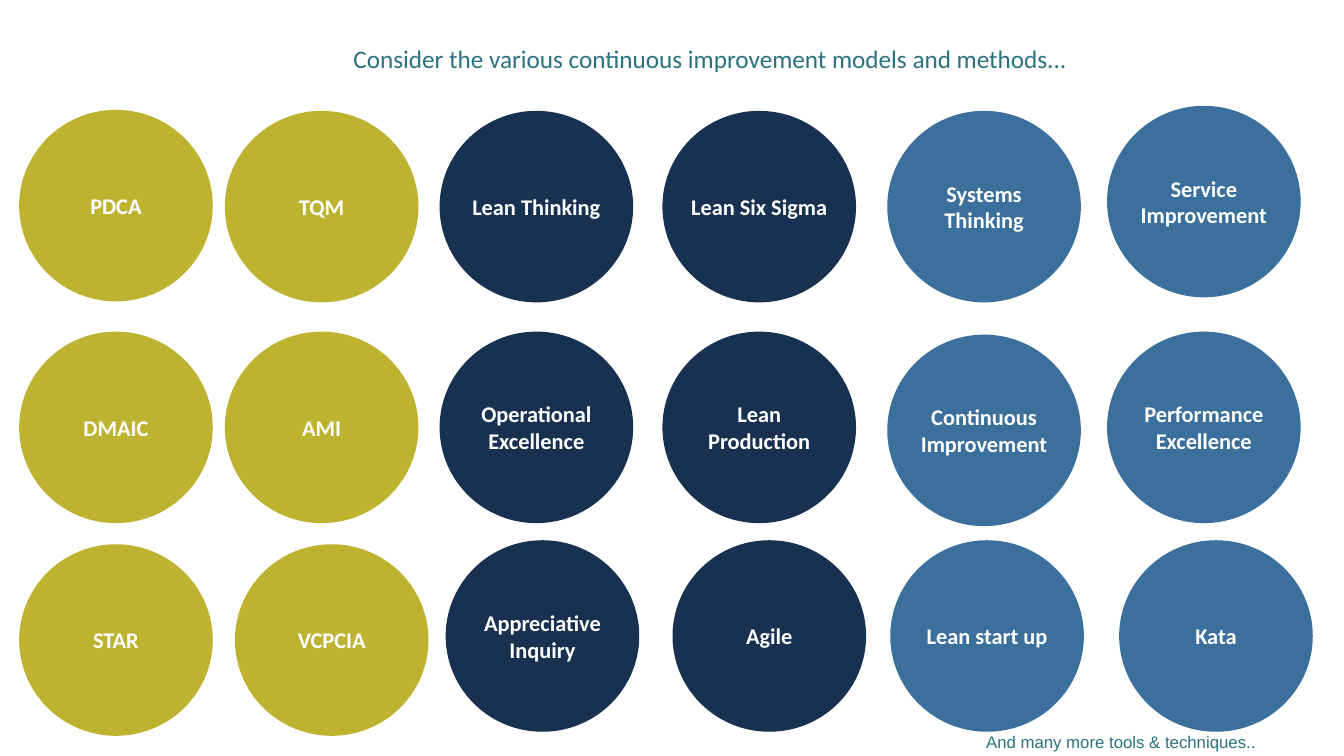
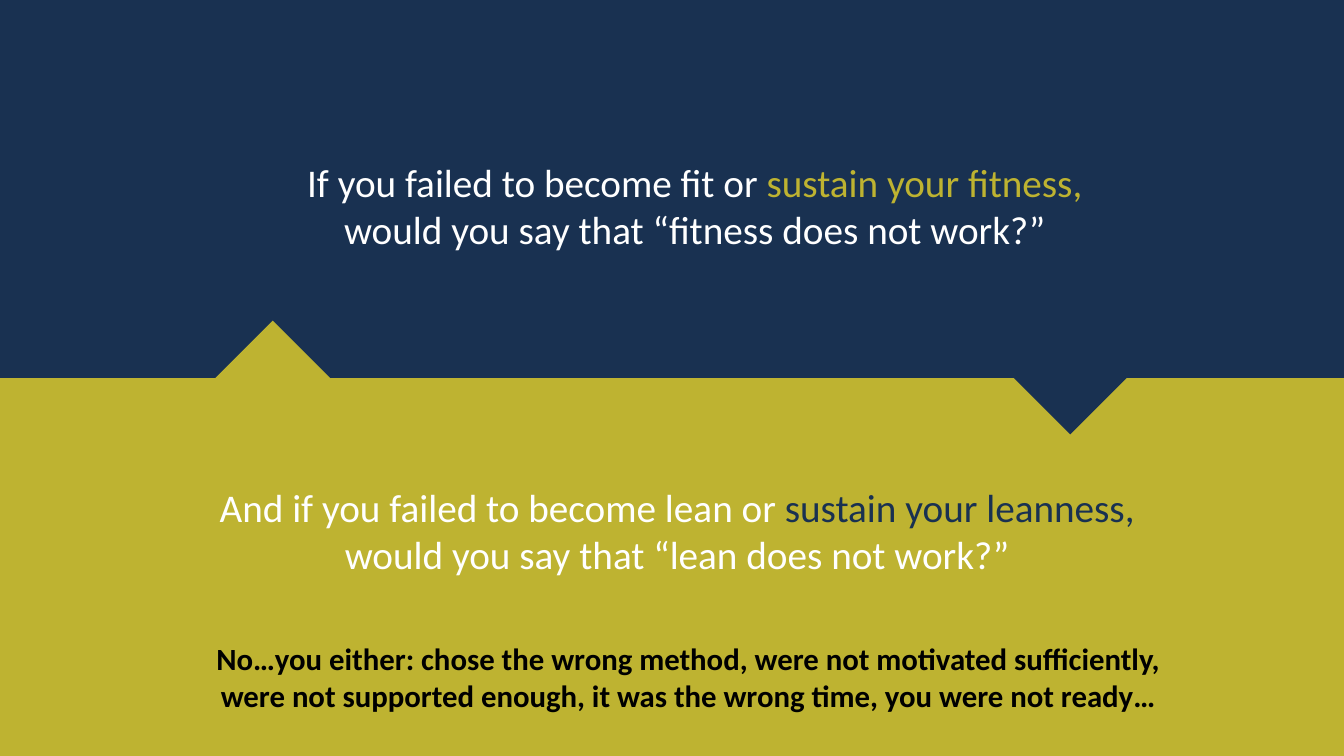
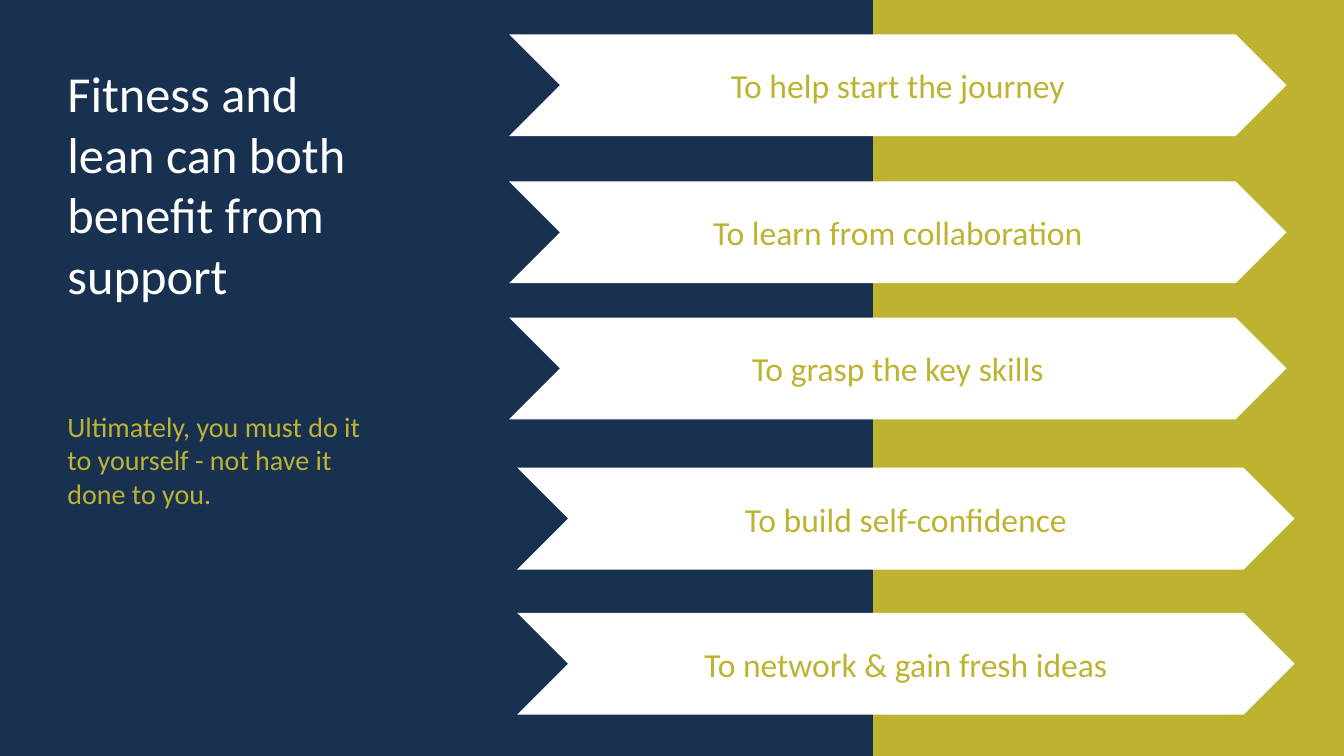
"""Build three slides comparing improvement methods with getting fit."""
from dataclasses import dataclass

from pptx import Presentation
from pptx.dml.color import RGBColor
from pptx.enum import shapes, text
from pptx.util import Inches, Pt

NAVY, OLIVE, BLUE, TEAL = "193151", "BEB331", "3B709C", "2B7280"
WHITE, BLACK = "FFFFFF", "000000"
WIDTH, HEIGHT = 13.33, 7.5
CENTER, LEFT = text.PP_ALIGN.CENTER, text.PP_ALIGN.LEFT
TOP, MIDDLE = text.MSO_ANCHOR.TOP, text.MSO_ANCHOR.MIDDLE
SHAPE = shapes.MSO_SHAPE


@dataclass(frozen=True)
class Box:
    left: float
    top: float
    width: float
    height: float

    def lengths(self):
        return [Inches(v) for v in (self.left, self.top, self.width, self.height)]


@dataclass(frozen=True)
class MethodColumn:
    colour: str
    methods: tuple[str, str, str]
    lefts: tuple[float, float, float]
    tops: tuple[float, float, float]


@dataclass(frozen=True)
class Benefit:
    label: str
    left: float
    top: float


METHOD_COLUMNS = (
    MethodColumn(OLIVE, ("PDCA", "DMAIC", "STAR"), (0.19, 0.19, 0.19), (1.09, 3.29, 5.4)),
    MethodColumn(OLIVE, ("TQM", "AMI", "VCPCIA"), (2.23, 2.23, 2.33), (1.1, 3.29, 5.4)),
    MethodColumn(NAVY, ("Lean Thinking", "Operational Excellence", "Appreciative Inquiry"),
                 (4.36, 4.36, 4.42), (1.1, 3.29, 5.36)),
    MethodColumn(NAVY, ("Lean Six Sigma", "Lean Production", "Agile"),
                 (6.57, 6.57, 6.67), (1.1, 3.29, 5.36)),
    MethodColumn(BLUE, ("Systems Thinking", "Continuous Improvement", "Lean start up"),
                 (8.8, 8.8, 8.83), (1.1, 3.32, 5.36)),
    MethodColumn(BLUE, ("Service Improvement", "Performance Excellence", "Kata"),
                 (10.98, 10.98, 11.1), (1.05, 3.29, 5.36)),
)

BENEFITS = (
    Benefit("To help start the journey", 5.05, 0.34),
    Benefit("To learn from collaboration", 5.05, 1.8),
    Benefit("To grasp the key skills", 5.05, 3.15),
    Benefit("To build self-confidence", 5.13, 4.64),
    Benefit("To network & gain fresh ideas", 5.13, 6.08),
)


def rgb(colour: str) -> RGBColor:
    """Turn a hex string into a colour."""
    return RGBColor.from_string(colour)


def write(holder, *phrases, size, colour=WHITE, font="Calibri", bold=False,
          align=CENTER, anchor=TOP, inset=0.1):
    """Write phrases, each a string or a (string, colour) pair, as one paragraph."""
    frame = holder.text_frame
    frame.word_wrap = True
    frame.vertical_anchor = anchor
    frame.margin_left = frame.margin_right = Inches(inset)
    frame.margin_top = frame.margin_bottom = Inches(0.05)
    paragraph = frame.paragraphs[0]
    paragraph.alignment = align
    for phrase in phrases:
        words, shade = (phrase, colour) if isinstance(phrase, str) else phrase
        for number, line in enumerate(words.split("\n")):
            if number:
                paragraph.add_line_break()
            if line:
                run = paragraph.add_run()
                run.text = line
                run.font.size = Pt(size)
                run.font.name = font
                run.font.bold = bold
                run.font.color.rgb = rgb(shade)


def add_text(slide, box: Box, *phrases, **style):
    """Add a text box holding the phrases."""
    write(slide.shapes.add_textbox(*box.lengths()), *phrases, **style)


def add_figure(slide, kind, box: Box, fill: str, rotation: float = 0):
    """Add a flat filled shape without an outline."""
    figure = slide.shapes.add_shape(kind, *box.lengths())
    figure.shadow.inherit = False
    figure.fill.solid()
    figure.fill.fore_color.rgb = rgb(fill)
    figure.line.fill.background()
    figure.rotation = rotation
    return figure


def build_methods(slide):
    """Draw the wall of improvement methods."""
    add_text(slide, Box(2.43, 0.19, 9.23, 0.77),
             "Consider the various continuous improvement models and methods...",
             size=18, colour=TEAL, anchor=MIDDLE, inset=0)
    add_text(slide, Box(9.78, 7.16, 2.82, 0.39), "And many more tools & techniques..",
             size=12, colour=TEAL, font="Arial", align=LEFT, anchor=MIDDLE, inset=0)
    for column in METHOD_COLUMNS:
        for method, left, top in zip(column.methods, column.lefts, column.tops):
            circle = add_figure(slide, SHAPE.OVAL, Box(left, top, 1.92, 1.9), column.colour)
            write(circle, method, size=16, bold=True, anchor=MIDDLE, inset=0)


def build_question(slide):
    """Draw the fitness question above the lean question."""
    half = HEIGHT / 2
    add_figure(slide, SHAPE.RECTANGLE, Box(0, 0, WIDTH, half), NAVY)
    add_figure(slide, SHAPE.RECTANGLE, Box(0, half, WIDTH, half), OLIVE)
    add_figure(slide, SHAPE.RIGHT_TRIANGLE, Box(1.91, 3.51, 1.59, 1.59), OLIVE, 135)
    add_figure(slide, SHAPE.RIGHT_TRIANGLE, Box(9.82, 2.39, 1.59, 1.59), NAVY, 315)
    add_text(slide, Box(2.35, 1.52, 9.08, 1.04), "If you failed to become fit or ",
             ("sustain your fitness,\n", OLIVE),
             "would you say that “fitness does not work?”", size=28)
    add_text(slide, Box(2.07, 4.75, 9.29, 1.04), "And if you failed to become lean or ",
             ("sustain your leanness, ", NAVY),
             "would you say that “lean does not work?”", size=28)
    add_text(slide, Box(1.92, 6.3, 9.81, 1.04),
             "No…you either: chose the wrong method, were not motivated sufficiently, "
             "were not supported enough, it was the wrong time, you were not ready…",
             size=22, colour=BLACK, bold=True)


def build_support(slide):
    """Draw the benefits of support as arrows."""
    split = 8.66
    add_figure(slide, SHAPE.RECTANGLE, Box(0, 0, split, HEIGHT), NAVY)
    add_figure(slide, SHAPE.RECTANGLE, Box(split, 0, WIDTH - split, HEIGHT), OLIVE)
    add_text(slide, Box(0.57, 0.57, 3.31, 2.87),
             "Fitness and lean can both benefit from support", size=36, align=LEFT)
    for benefit in BENEFITS:
        arrow = add_figure(slide, SHAPE.CHEVRON,
                           Box(benefit.left, benefit.top, 7.71, 1.01), WHITE)
        write(arrow, benefit.label, size=24, colour=OLIVE, anchor=MIDDLE)
    add_text(slide, Box(0.57, 4.01, 3.31, 1.41),
             "Ultimately, you must do it to yourself - not have it done to you.",
             size=20, colour=OLIVE, align=LEFT)


def main():
    """Build and save the presentation."""
    deck = Presentation()
    deck.slide_width, deck.slide_height = Inches(WIDTH), Inches(HEIGHT)
    for build in (build_methods, build_question, build_support):
        build(deck.slides.add_slide(deck.slide_layouts[6]))
    deck.save("out.pptx")


if __name__ == "__main__":
    main()
